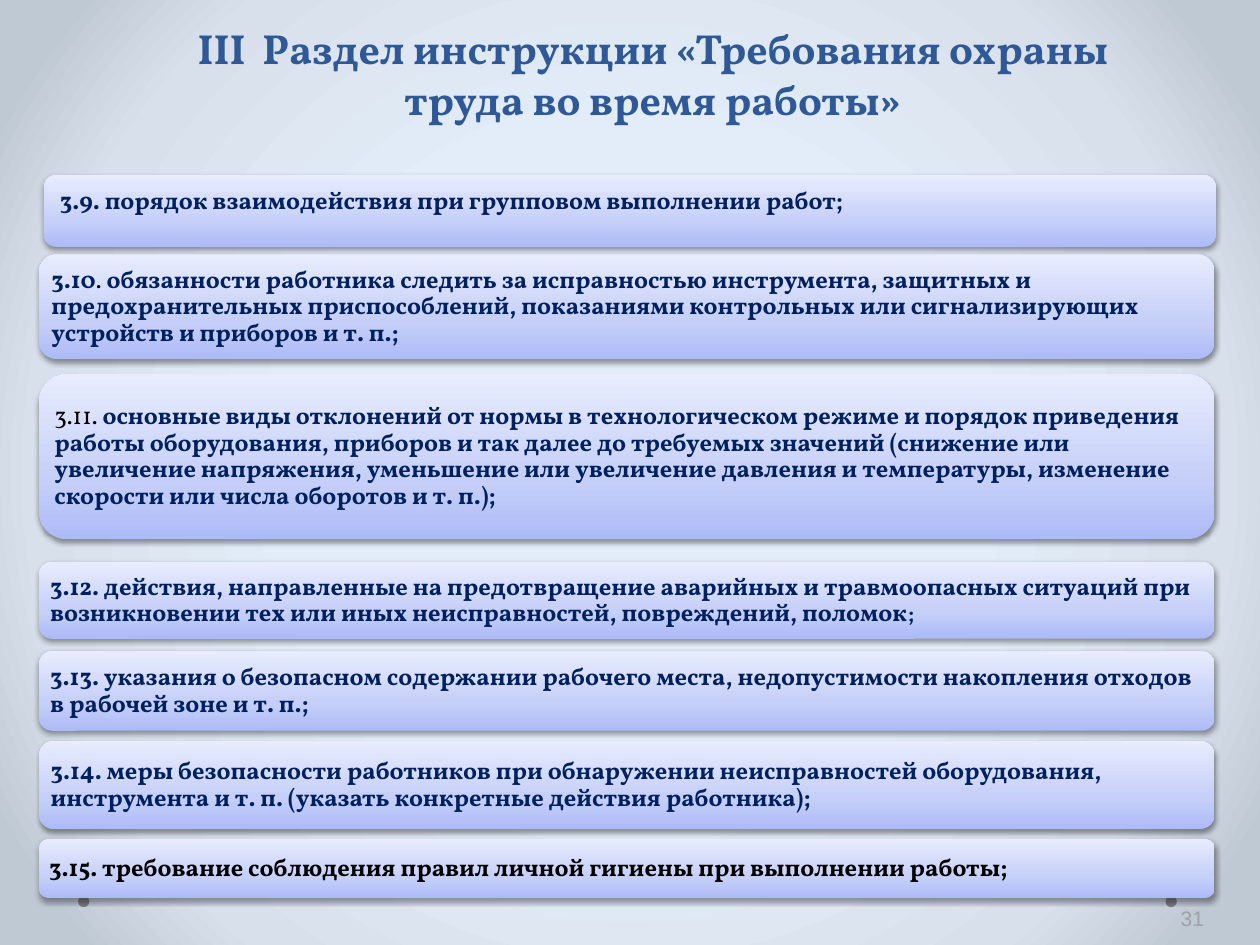
"""Build the slide listing items 3.9 to 3.15 of the labour safety instruction."""
from lxml.etree import fromstring
from pptx import Presentation
from pptx.dml.color import RGBColor
from pptx.enum.shapes import MSO_SHAPE as Shape
from pptx.enum.text import MSO_ANCHOR as Anchor, MSO_AUTO_SIZE as AutoSize, PP_ALIGN as Align
from pptx.oxml.ns import nsdecls, qn
from pptx.util import Pt

THEME = {
    "heading": {"name": "Vollkorn", "size": 24, "color": "2F5897", "bold": True},
    "navy": {"name": "Vollkorn", "size": 14, "color": "002060", "bold": True},
    "small": {"name": "Vollkorn", "size": 12, "color": "002060", "bold": True},
    "black": {"name": "Vollkorn", "size": 14, "color": "000000", "bold": True},
    "plain": {"name": "Vollkorn", "size": 14, "color": "000000", "bold": False},
    "number": {"name": "Arial", "size": 12, "color": "A0A0A0", "bold": False},
    "dot": "808080",
    "backdrop": [(43, "E3EDF9"), (76, "D8E0EB"), (92, "BFC9D4")],
    "panel": [(0, "ADBBF6"), (35, "C5CFF8"), (100, "E8ECFD")],
}
RADIAL = '<a:path path="circle"><a:fillToRect l="50000" t="50000" r="50000" b="50000"/></a:path>'
UPWARD = '<a:lin ang="16200000" scaled="0"/>'
SHADOW = ('<a:outerShdw {} blurRad="39400" dist="20300" dir="5400000" rotWithShape="0">'
          '<a:srgbClr val="000000"><a:alpha val="38000"/></a:srgbClr></a:outerShdw>')

HEADING = "III  Раздел инструкции «Требования охраны труда во время работы»"
PAGE = "31"
FIRST = [("3.9. порядок взаимодействия при групповом выполнении работ;", "navy")]
REQUIREMENTS = [  # top, height, runs
    (145.4, 59.8, [
        ("3.10", "navy"), (". ", "plain"),
        ("обязанности работника следить за исправностью инструмента, защитных и "
         "предохранительных приспособлений, показаниями контрольных или сигнализирующих "
         "устройств и приборов и т. п.;", "navy")]),
    (213.8, 94.3, [
        ("3.11. ", "plain"),
        ("основные виды отклонений от нормы в технологическом режиме и порядок приведения "
         "работы оборудования, приборов и так далее до требуемых значений (снижение или "
         "увеличение напряжения, уменьшение или увеличение давления и температуры, изменение "
         "скорости или числа оборотов и т. п.);", "navy")]),
    (321.1, 43.9, [
        ("3.12. действия, направленные на предотвращение аварийных и травмоопасных ситуаций при "
         "возникновении тех или иных неисправностей, повреждений, поломок", "navy"),
        (";", "small")]),
    (372.2, 45.4, [
        ("3.13. указания о безопасном содержании рабочего места, недопустимости накопления "
         "отходов в рабочей зоне и т. п.;", "navy")]),
    (423.4, 50.4, [
        ("3.14. меры безопасности работников при обнаружении неисправностей оборудования, "
         "инструмента и т. п. (указать конкретные действия работника);", "navy")]),
    (479.5, 33.8, [
        ("3.15. требование соблюдения правил личной гигиены при выполнении работы;", "black")]),
]
DOT_LEFTS, DOT_TOP, DOT_SIZE = (666, 44.6), 511.9, 6.5
PANEL_LEFT, PANEL_WIDTH = 22.3, 671.8


def paint_gradient(fill, root, stops, direction):
    fill.background()
    empty = root.find(".//" + qn("a:noFill"))
    marks = "".join(f'<a:gs pos="{pos * 1000}"><a:srgbClr val="{color}"/></a:gs>'
                    for pos, color in stops)
    gradient = f'<a:gradFill {nsdecls("a")} rotWithShape="1"><a:gsLst>{marks}</a:gsLst>{direction}</a:gradFill>'
    empty.getparent().replace(empty, fromstring(gradient))


def write(holder, runs, insets, align=Align.LEFT, spacing=1.0, **layout):
    frame = holder.text_frame
    sides = zip(("margin_left", "margin_top", "margin_right", "margin_bottom"), map(Pt, insets))
    for key, value in {"word_wrap": True, **dict(sides), **layout}.items():
        setattr(frame, key, value)
    paragraph = frame.paragraphs[0]
    paragraph.alignment, paragraph.line_spacing = align, spacing
    for words, style in runs:
        run = paragraph.add_run()
        run.text = words
        look = THEME[style]
        for key, value in {"name": look["name"], "size": Pt(look["size"]), "bold": look["bold"]}.items():
            setattr(run.font, key, value)
        run.font.color.rgb = RGBColor.from_string(look["color"])


def add_panel(slide, left, top, width, height):
    panel = slide.shapes.add_shape(Shape.ROUNDED_RECTANGLE, *map(Pt, (left, top, width, height)))
    paint_gradient(panel.fill, panel._element.spPr, THEME["panel"], UPWARD)
    panel.line.fill.background()
    panel.shadow.inherit = False
    effects = panel._element.spPr.find(qn("a:effectLst"))
    effects.append(fromstring(SHADOW.format(nsdecls("a"))))
    return panel


def main():
    deck = Presentation()
    deck.slide_width, deck.slide_height = Pt(720), Pt(540)
    slide = deck.slides.add_slide(deck.slide_layouts[6])
    paint_gradient(slide.background.fill, slide._element, THEME["backdrop"], RADIAL)

    for left in DOT_LEFTS:
        dot = slide.shapes.add_shape(Shape.OVAL, *map(Pt, (left, DOT_TOP, DOT_SIZE, DOT_SIZE)))
        dot.fill.solid()
        dot.fill.fore_color.rgb = RGBColor.from_string(THEME["dot"])
        dot.line.fill.background()
        dot.shadow.inherit = False

    page = slide.shapes.add_textbox(*map(Pt, (672.5, 514.1, 43.9, 20.9)))
    write(page, [(PAGE, "number")], (2.2, 3.6, 3.6, 3.6), vertical_anchor=Anchor.MIDDLE)
    heading = slide.shapes.add_textbox(*map(Pt, (96.5, 9.4, 553, 65.5)))
    write(heading, [(HEADING, "heading")], (7.2, 3.6, 7.2, 3.6), Align.CENTER,
          auto_size=AutoSize.SHAPE_TO_FIT_TEXT)

    for top, height, runs in REQUIREMENTS:
        panel = add_panel(slide, PANEL_LEFT, top, PANEL_WIDTH, height)
        write(panel, runs, (4.2,) * 4, spacing=0.9, vertical_anchor=Anchor.MIDDLE)
    first = add_panel(slide, 25.2, 100.1, 669.6, 41)
    write(first, FIRST, (7.2, 3.6, 7.2, 3.6), vertical_anchor=Anchor.TOP)

    deck.save("out.pptx")


if __name__ == "__main__":
    main()
